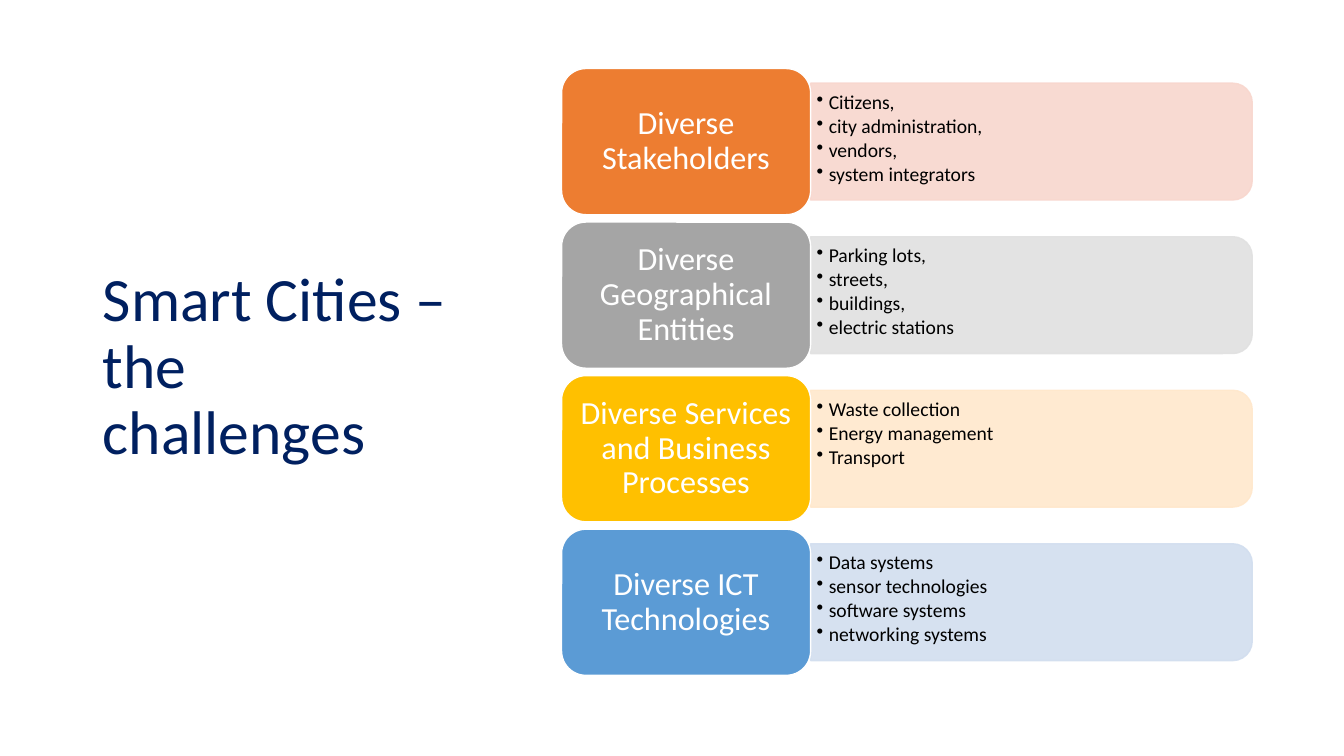
from pptx import Presentation
from pptx.dml.color import RGBColor
from pptx.enum.shapes import MSO_SHAPE
from pptx.enum.text import MSO_ANCHOR, MSO_AUTO_SIZE, PP_ALIGN
from pptx.oxml.ns import qn
from pptx.util import Inches, Pt
from lxml.etree import SubElement

NAVY = RGBColor(0x00, 0x20, 0x60)
WHITE = RGBColor(0xFF, 0xFF, 0xFF)
BLACK = RGBColor(0x00, 0x00, 0x00)
ORANGE = RGBColor(0xED, 0x7D, 0x31)
PEACH = RGBColor(0xF8, 0xD7, 0xCE)
GRAY = RGBColor(0xA5, 0xA5, 0xA5)
SILVER = RGBColor(0xE1, 0xE1, 0xE1)
GOLD = RGBColor(0xFF, 0xC0, 0x00)
CREAM = RGBColor(0xFF, 0xE8, 0xCC)
BLUE = RGBColor(0x5B, 0x9B, 0xD5)
ICE = RGBColor(0xD2, 0xDE, 0xEF)

ROWS = [
    ("Diverse Stakeholders", ORANGE, PEACH,
     ["Citizens,", "city administration,", "vendors,", "system integrators"]),
    ("Diverse Geographical Entities", GRAY, SILVER,
     ["Parking lots,", "streets,", "buildings,", "electric stations"]),
    ("Diverse Services and Business Processes", GOLD, CREAM,
     ["Waste collection", "Energy management", "Transport"]),
    ("Diverse ICT Technologies", BLUE, ICE,
     ["Data systems", "sensor technologies", "software systems",
      "networking systems"]),
]
FIRST, LAST = 0.68, 5.25
LEFT, WIDTH, HEIGHT = 5.57, 2.47, 1.45
LENGTH, DEPTH = 4.38, 1.16


def assign(target, values):
    for name, value in values.items():
        setattr(target, name, value)


def set_frame(frame, anchor, side, top):
    assign(frame, {
        "word_wrap": True, "auto_size": MSO_AUTO_SIZE.NONE,
        "vertical_anchor": anchor,
        "margin_left": Inches(side), "margin_right": Inches(side),
        "margin_top": Inches(top), "margin_bottom": Inches(top),
    })


def set_text(para, text, size, color, align):
    para.text = text
    assign(para, {"alignment": align, "line_spacing": 0.9})
    assign(para.font, {"name": "Calibri", "size": Pt(size)})
    para.font.color.rgb = color


def add_bullet(para):
    props = para._p.get_or_add_pPr()
    props.set("marL", str(Inches(0.12)))
    props.set("indent", str(-Inches(0.12)))
    SubElement(props, qn("a:buChar"), char="•")


def add_box(slide, kind, box, fill, line):
    shape = slide.shapes.add_shape(kind, *map(Inches, box))
    shape.shadow.inherit = False
    shape.fill.solid()
    shape.fill.fore_color.rgb = fill
    shape.line.color.rgb = line
    shape.line.width = Pt(1)
    return shape


def add_panel(slide, middle, color):
    left = LEFT + WIDTH + (LENGTH - DEPTH) / 2
    box = (left, middle - LENGTH / 2, DEPTH, LENGTH)
    panel = add_box(slide, MSO_SHAPE.ROUND_2_SAME_RECTANGLE, box, color, color)
    panel.rotation = 90
    for tint in panel._element.spPr.iter(qn("a:srgbClr")):
        SubElement(tint, qn("a:alpha"), val="90000")


def add_list(slide, middle, items):
    box = (LEFT + WIDTH, middle - 0.53, 4.33, 1.05)
    frame = slide.shapes.add_textbox(*map(Inches, box)).text_frame
    set_frame(frame, MSO_ANCHOR.TOP, 0.06, 0.04)
    for index, item in enumerate(items):
        para = frame.add_paragraph() if index else frame.paragraphs[0]
        add_bullet(para)
        set_text(para, item, 14, BLACK, PP_ALIGN.LEFT)
        para.space_after = Pt(2)


def add_label(slide, top, text, color):
    box = (LEFT, top, WIDTH, HEIGHT)
    label = add_box(slide, MSO_SHAPE.ROUNDED_RECTANGLE, box, color, WHITE)
    set_frame(label.text_frame, MSO_ANCHOR.MIDDLE, 0.1, 0.05)
    set_text(label.text_frame.paragraphs[0], text, 23, WHITE, PP_ALIGN.CENTER)


def set_title(slide, text):
    title = slide.shapes.title
    assign(title, {"left": Inches(0.92), "top": Inches(0.61),
                   "width": Inches(3.69), "height": Inches(6.09)})
    set_frame(title.text_frame, MSO_ANCHOR.MIDDLE, 0.1, 0.05)
    set_text(title.text_frame.paragraphs[0], text, 44, NAVY, PP_ALIGN.LEFT)


def main():
    deck = Presentation()
    assign(deck, {"slide_width": Inches(13.33), "slide_height": Inches(7.5)})
    slide = deck.slides.add_slide(deck.slide_layouts[5])
    set_title(slide, "Smart Cities – the challenges")
    step = (LAST - FIRST) / (len(ROWS) - 1)
    for index, (text, color, tint, items) in enumerate(ROWS):
        top = FIRST + index * step
        middle = top + HEIGHT / 2
        add_panel(slide, middle, tint)
        add_list(slide, middle, items)
        add_label(slide, top, text, color)
    deck.save("out.pptx")


if __name__ == "__main__":
    main()
